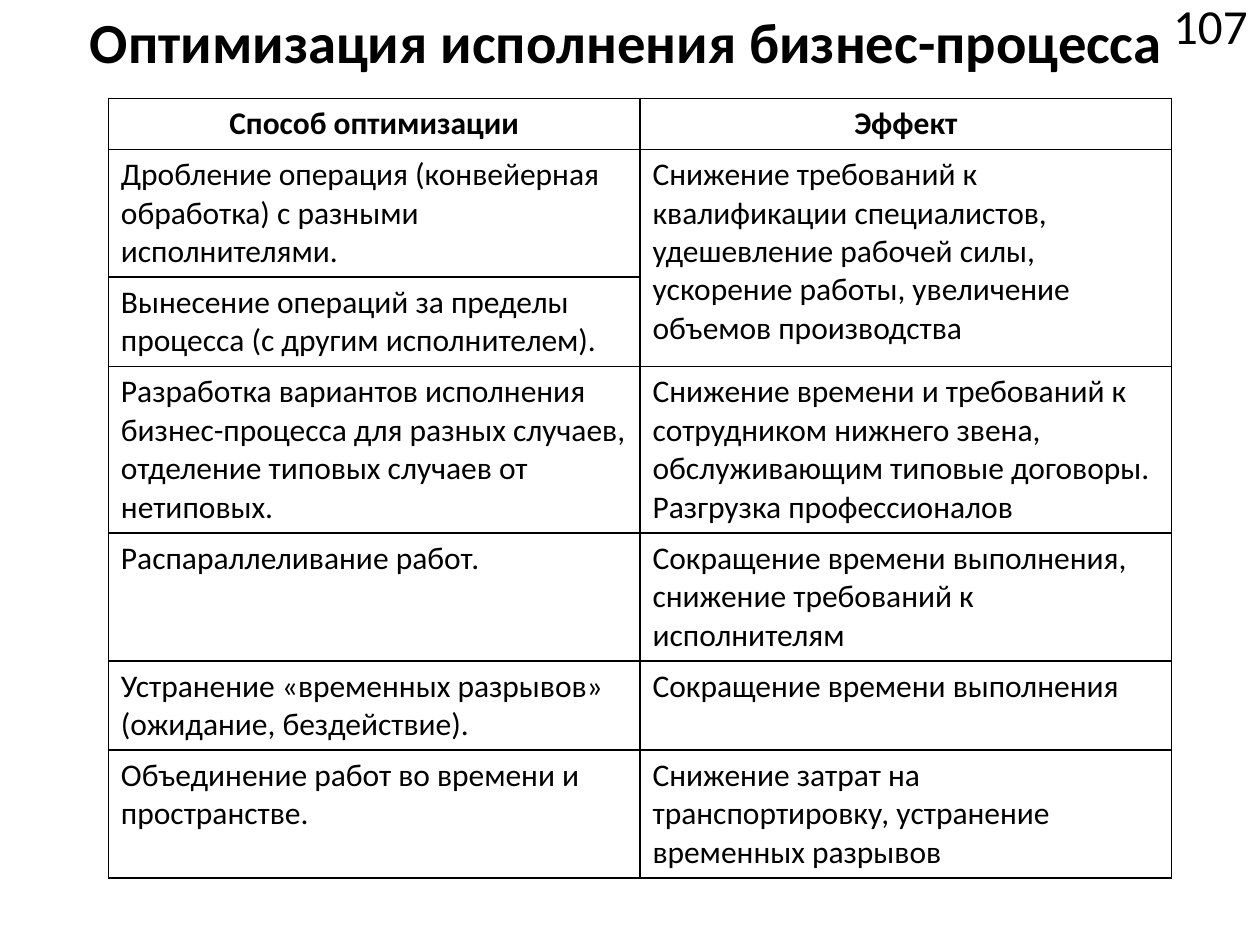
from dataclasses import dataclass

from lxml import etree
from pptx import Presentation
from pptx.dml.color import RGBColor
from pptx.enum.text import MSO_ANCHOR, PP_ALIGN
from pptx.oxml.ns import qn
from pptx.util import Inches, Pt

CENTER, LEFT, RIGHT = PP_ALIGN.CENTER, PP_ALIGN.LEFT, PP_ALIGN.RIGHT
TOP, MIDDLE = MSO_ANCHOR.TOP, MSO_ANCHOR.MIDDLE
TITLE_ONLY = 5


@dataclass(frozen=True)
class Theme:
    """Fonts, colours and sizes of the slide."""
    font: str = "Calibri"
    ink: RGBColor = RGBColor(0, 0, 0)
    paper: RGBColor = RGBColor(255, 255, 255)
    title: float = 32.4
    number: float = 28
    body: float = 18
    border: float = 1


THEME = Theme()
HEADINGS = ("Способ оптимизации", "Эффект")
METHODS = [
    ("Дробление операция (конвейерная обработка) с разными исполнителями.",
     "Снижение требований к квалификации специалистов, удешевление рабочей силы, "
     "ускорение работы, увеличение объемов производства"),
    ("Вынесение операций за пределы процесса (с другим исполнителем).", None),
    ("Разработка вариантов исполнения бизнес-процесса для разных случаев, "
     "отделение типовых случаев от нетиповых.",
     "Снижение времени и требований к сотрудником нижнего звена, "
     "обслуживающим типовые договоры. Разгрузка профессионалов"),
    ("Распараллеливание работ.",
     "Сокращение времени выполнения, снижение требований к исполнителям"),
    ("Устранение «временных разрывов» (ожидание, бездействие).",
     "Сокращение времени выполнения"),
    ("Объединение работ во времени и пространстве.",
     "Снижение затрат на транспортировку, устранение временных разрывов"),
]
ROW_LINES = (1, 3, 2, 4, 3, 2, 3)
LINE_HEIGHT, ROW_PADDING = 0.305, 0.1


def write(frame, text, size, align, bold=False):
    """Put one styled paragraph in a text frame."""
    paragraph = frame.paragraphs[0]
    paragraph.text = text
    paragraph.alignment = align
    font = paragraph.font
    font.name, font.size, font.bold = THEME.font, Pt(size), bold
    font.color.rgb = THEME.ink


def outline_cell(cell):
    """Draw a solid border on all four sides of a cell."""
    properties = cell._tc.get_or_add_tcPr()
    for index, side in enumerate(("a:lnL", "a:lnR", "a:lnT", "a:lnB")):
        line = etree.Element(qn(side), w=str(Pt(THEME.border)))
        fill = etree.SubElement(line, qn("a:solidFill"))
        etree.SubElement(fill, qn("a:srgbClr"), val=str(THEME.ink))
        properties.insert(index, line)


def place_title(slide, left, top, width, height):
    """Place the heading in the title placeholder."""
    title = slide.shapes.title
    title.left, title.top, title.width, title.height = map(
        Inches, (left, top, width, height))
    title.text_frame.vertical_anchor = TOP
    write(title.text_frame, "Оптимизация исполнения бизнес-процесса",
          THEME.title, CENTER, bold=True)


def place_page_number(slide, left, top, width, height):
    """Place the page number in the corner."""
    number = slide.shapes.add_textbox(*map(Inches, (left, top, width, height)))
    number.text_frame.word_wrap = True
    number.text_frame.vertical_anchor = MIDDLE
    write(number.text_frame, "107", THEME.number, RIGHT)


def place_methods_table(slide, left, top, width):
    """Place the table of optimisation methods and their effects."""
    heights = [ROW_PADDING + LINE_HEIGHT * lines for lines in ROW_LINES]
    rows = [HEADINGS, *METHODS]
    methods = slide.shapes.add_table(
        len(rows), len(HEADINGS),
        *map(Inches, (left, top, width, sum(heights)))).table
    methods.horz_banding = False
    for column in methods.columns:
        column.width = Inches(width / len(HEADINGS))
    for row_index, (texts, height) in enumerate(zip(rows, heights)):
        methods.rows[row_index].height = Inches(height)
        heading = row_index == 0
        for column_index, text in enumerate(texts):
            cell = methods.cell(row_index, column_index)
            cell.fill.solid()
            cell.fill.fore_color.rgb = THEME.paper
            outline_cell(cell)
            if text:
                write(cell.text_frame, text, THEME.body,
                      CENTER if heading else LEFT, bold=heading)
            else:
                methods.cell(row_index - 1, column_index).merge(cell)


def main():
    """Build and save the slide."""
    deck = Presentation()
    deck.slide_width, deck.slide_height = Inches(10), Inches(7.5)
    slide = deck.slides.add_slide(deck.slide_layouts[TITLE_ONLY])
    place_title(slide, 0.47, 0, 9, 0.94)
    place_page_number(slide, 8.98, 0, 1.02, 0.39)
    place_methods_table(slide, 0.86, 0.78, 8.44)
    deck.save("out.pptx")


if __name__ == "__main__":
    main()
